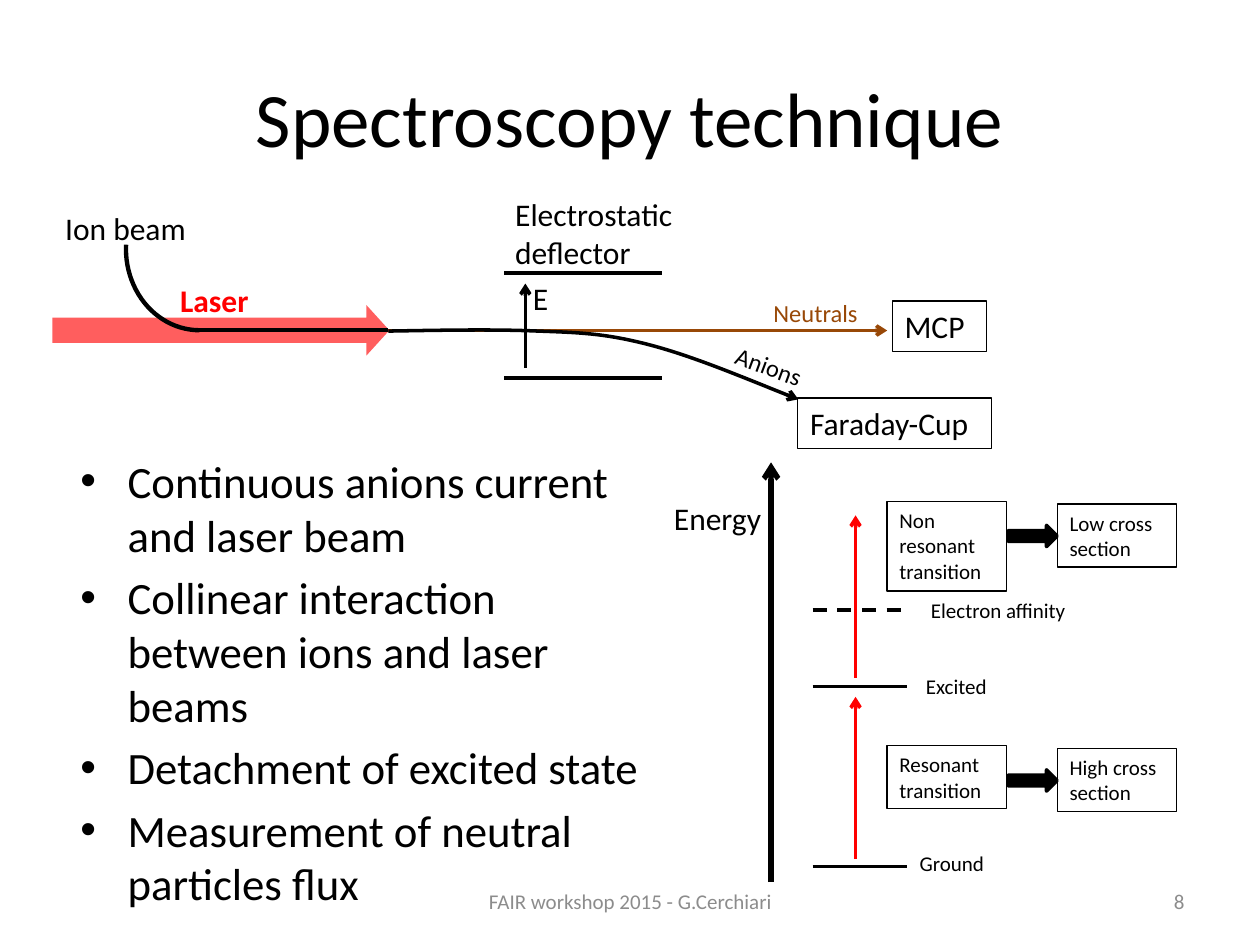
import pptx
import pptx.dml.color
import pptx.enum.dml
import pptx.enum.shapes
import pptx.enum.text
import pptx.oxml.ns
import pptx.util
from lxml import etree

Pt = pptx.util.Pt
qn = pptx.oxml.ns.qn
Kind = pptx.enum.shapes.MSO_SHAPE
Align = pptx.enum.text.PP_ALIGN
Anchor = pptx.enum.text.MSO_ANCHOR
RGB = pptx.dml.color.RGBColor.from_string

FONT = "Calibri"
INK = {"black": "000000", "red": "FF0000", "brown": "984807", "gray": "8C8C8C"}

deck = pptx.Presentation()
deck.slide_width, deck.slide_height = Pt(720), Pt(540)
slide = deck.slides.add_slide(deck.slide_layouts[5])
shapes = slide.shapes


def stroke(item, hue, width, head=False, dash=False):
    """Give a line or outline its colour, width, arrowhead and no shadow."""
    item.line.color.rgb = RGB(INK[hue])
    item.line.width = Pt(width)
    if dash:
        item.line.dash_style = pptx.enum.dml.MSO_LINE.DASH
    if head:
        etree.SubElement(item.line._ln, qn("a:tailEnd"), type="arrow")
    etree.SubElement(item._element.spPr, qn("a:effectLst"))


def label(x, y, w, h, text, size, hue="black", align=Align.LEFT, bold=False):
    """Add a wrapped text box holding one run."""
    box = shapes.add_textbox(Pt(x), Pt(y), Pt(w), Pt(h))
    box.text_frame.word_wrap = True
    para = box.text_frame.paragraphs[0]
    para.alignment = align
    run = para.add_run()
    run.text = text
    run.font.name, run.font.size, run.font.bold = FONT, Pt(size), bold
    run.font.color.rgb = RGB(INK[hue])
    return box


# Title
title = shapes.title
title.left, title.top, title.width, title.height = Pt(36), Pt(21.6), Pt(648), Pt(90)
title.text_frame.vertical_anchor = Anchor.MIDDLE
para = title.text_frame.paragraphs[0]
para.alignment = Align.CENTER
run = para.add_run()
run.text = "Spectroscopy technique"
run.font.name, run.font.size = FONT, Pt(44)
run.font.color.rgb = RGB(INK["black"])

# Bullet list
points = [
    "Continuous anions current and laser beam",
    "Collinear interaction between ions and laser beams",
    "Detachment of excited state",
    "Measurement of neutral particles flux",
]
body = shapes.add_textbox(Pt(38.9), Pt(255.6), Pt(336.2), Pt(267)).text_frame
body.word_wrap = True
for i, text in enumerate(points):
    para = body.paragraphs[0] if i == 0 else body.add_paragraph()
    props = para._p.get_or_add_pPr()
    props.set("marL", str(Pt(27)))
    props.set("indent", str(-Pt(27)))
    para.space_before = Pt(5 if i else 0)
    etree.SubElement(props, qn("a:buFont"), typeface="Arial")
    etree.SubElement(props, qn("a:buChar"), char="•")
    run = para.add_run()
    run.text = text
    run.font.name, run.font.size = FONT, Pt(25.6)
    run.font.color.rgb = RGB(INK["black"])

# Laser beam, over the neutrals line
lines = [
    # x1, y1, x2, y2, colour, width, head, dash
    (216.7, 188.9, 507, 188.9, "brown", 2, True, False),    # neutrals
    (222, 188.6, 113.8, 188.6, "black", 2.5, False, False),  # ion beam
    (288, 156.2, 378, 156.2, "black", 2.25, False, False),  # upper plate
    (288, 216, 378, 216, "black", 2.25, False, False),      # lower plate
    (300.2, 210.2, 300.2, 162, "black", 2, True, False),    # field E
    (440.6, 504, 440.6, 264.2, "black", 3, True, False),    # energy axis
    (464.4, 348.5, 518.4, 348.5, "black", 2, False, True),  # affinity
    (464.4, 392.4, 518.4, 392.4, "black", 2, False, False),  # excited
    (464.4, 495.2, 518.4, 495.2, "black", 2, False, False),  # ground
    (488.9, 387.4, 488.9, 294.5, "red", 2, True, False),
    (488.9, 491, 488.9, 398.2, "red", 2, True, False),
]
for i, (x1, y1, x2, y2, *look) in enumerate(lines):
    link = shapes.add_connector(
        pptx.enum.shapes.MSO_CONNECTOR.STRAIGHT, Pt(x1), Pt(y1), Pt(x2), Pt(y2))
    stroke(link, *look)
    if i == 0:
        laser = shapes.add_shape(Kind.RIGHT_ARROW, Pt(30), Pt(174.4), Pt(192.5), Pt(28.8))
        laser.adjustments[1] = 0.454
        laser.shadow.inherit = False
        laser.line.fill.background()
        laser.fill.solid()
        laser.fill.fore_color.rgb = RGB(INK["red"])
        tint = laser._element.spPr.find(".//" + qn("a:srgbClr"))
        etree.SubElement(tint, qn("a:alpha"), val="63000")

# Bend of the ion beam
bend = shapes.add_shape(Kind.ARC, Pt(72), Pt(95.8), Pt(84), Pt(92.9))
bend.adjustments[0], bend.adjustments[1] = 54, 109.99
bend.fill.background()
stroke(bend, "black", 2.5)

# Anions path: every three points make one Bezier segment
start = (222, 189.2)
knots = [
    (251.3, 188.7), (280.8, 188.1), (305.3, 189.1),
    (329.8, 190), (344.2, 190.2), (369.4, 196.6),
    (394.6, 203), (425.5, 216), (456.2, 228.2),
]
pen = shapes.build_freeform(Pt(start[0]), Pt(start[1]))
pen.add_line_segments([(Pt(x), Pt(y)) for x, y in knots], close=False)
anions = pen.convert_to_shape()
steps = anions._element.findall(".//" + qn("a:lnTo"))
for i in range(0, len(steps), 3):
    curve = etree.Element(qn("a:cubicBezTo"))
    steps[i].addprevious(curve)
    for step in steps[i:i + 3]:
        curve.append(step[0])
        step.getparent().remove(step)
anions.fill.background()
stroke(anions, "black", 2, True)

# Plain labels
label(378, 281.5, 82, 28.8, "Energy", 18)
label(518.4, 482.4, 87, 21.6, "Ground", 12)
label(522, 381.6, 87, 21.6, "Excited", 12)
label(524.9, 337.7, 106.6, 21.6, "Electron affinity", 12)
label(434.9, 167, 72, 24.5, "Neutrals", 14, "brown")
label(297.4, 156.2, 27.4, 28.8, "E", 18)
label(412.6, 198, 58.3, 24.5, "Anions", 14).rotation = 20.4
label(30.2, 115.9, 95.8, 28.8, "Ion beam", 18)
label(95.8, 157, 102.2, 28.8, "Laser", 18, "red", bold=True)
label(287.3, 108, 114.5, 51.1, "Electrostatic deflector", 18)

# Framed labels
frames = [
    (509.8, 172.1, 54, 28.8, "MCP", 18),
    (455.8, 227.5, 110.9, 28.8, "Faraday-Cup", 18),
    (506.9, 286.6, 68.4, 51.1, "Non resonant transition", 12),
    (604.1, 288, 68.4, 36, "Low cross section", 12),
    (506.9, 426.2, 68.4, 36, "Resonant transition", 12),
    (604.1, 427.7, 68.4, 36, "High cross section", 12),
]
for frame in frames:
    stroke(label(*frame), "black", 0.75)

# Arrows from transition to cross section
for y in (300.2, 439.9):
    arrow = shapes.add_shape(Kind.RIGHT_ARROW, Pt(576), Pt(y), Pt(28.1), Pt(12.2))
    arrow.fill.solid()
    arrow.fill.fore_color.rgb = RGB(INK["black"])
    stroke(arrow, "black", 2)

# Footer and page number
foot = label(246.2, 500.4, 228.2, 28.8, "FAIR workshop 2015 - G.Cerchiari", 12, "gray", Align.CENTER)
page = label(516.2, 500.4, 167.8, 28.8, "8", 12, "gray", Align.RIGHT)
for box in (foot, page):
    box.text_frame.vertical_anchor = Anchor.MIDDLE

deck.save("out.pptx")
